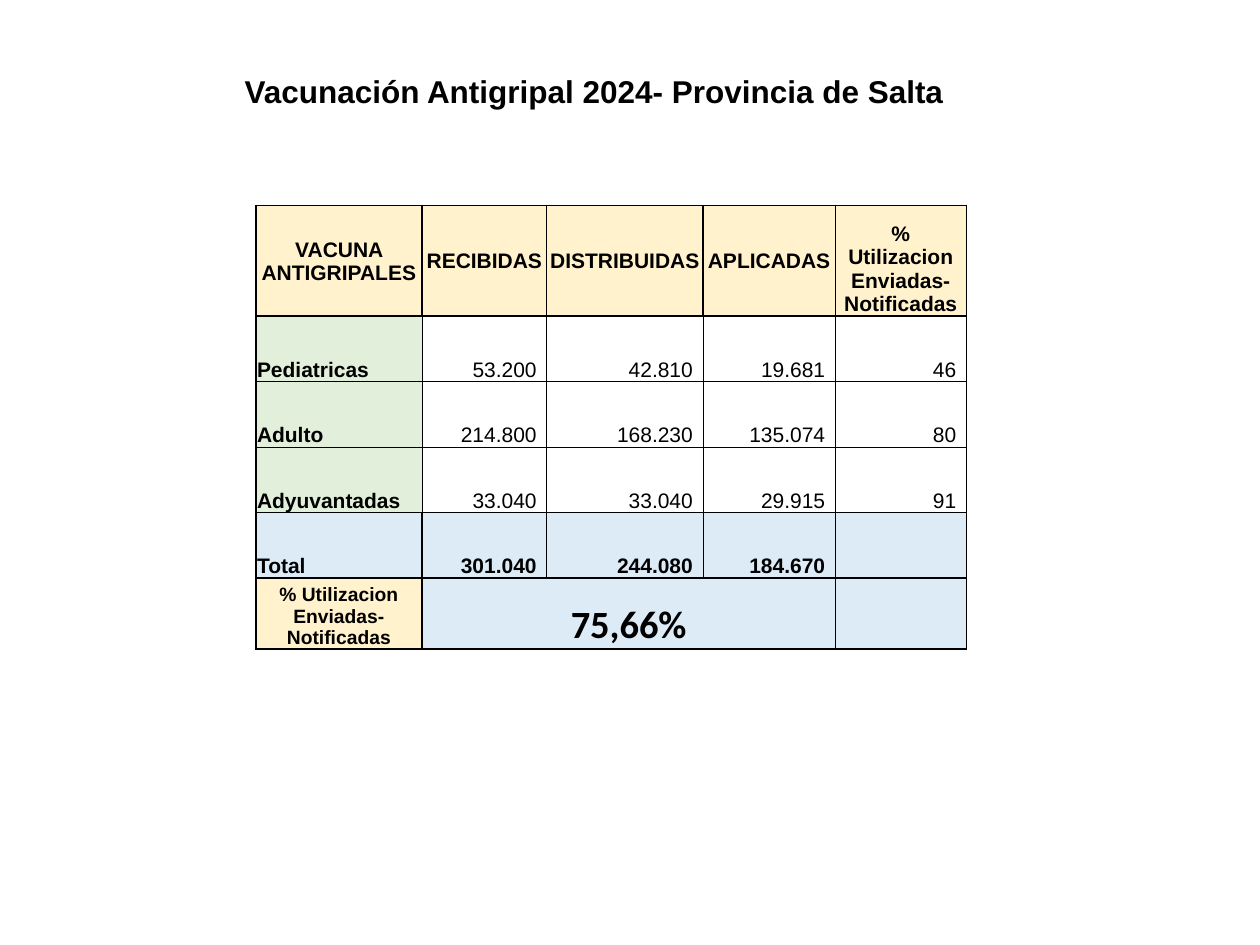
"""Build the slide on 2024 flu vaccination in the province of Salta."""
from lxml import etree
from pptx import Presentation
from pptx.dml.color import RGBColor
from pptx.enum.text import MSO_ANCHOR, MSO_AUTO_SIZE, PP_ALIGN
from pptx.oxml.ns import qn
from pptx.util import Inches, Pt

LEFT, CENTER, RIGHT = PP_ALIGN.LEFT, PP_ALIGN.CENTER, PP_ALIGN.RIGHT
MIDDLE, BOTTOM = MSO_ANCHOR.MIDDLE, MSO_ANCHOR.BOTTOM
GROW = MSO_AUTO_SIZE.SHAPE_TO_FIT_TEXT

BLACK = RGBColor(0x00, 0x00, 0x00)
CREAM = RGBColor(0xFF, 0xF2, 0xCC)
GREEN = RGBColor(0xE2, 0xEF, 0xDA)
BLUE = RGBColor(0xDD, 0xEB, 0xF7)

TITLE = "Vacunación Antigripal 2024- Provincia de Salta"
USE = "% Utilizacion Enviadas- Notificadas"
ROWS = [
    ["VACUNA ANTIGRIPALES", "RECIBIDAS", "DISTRIBUIDAS", "APLICADAS", USE],
    ["Pediatricas", "53.200", "42.810", "19.681", "46"],
    ["Adulto", "214.800", "168.230", "135.074", "80"],
    ["Adyuvantadas", "33.040", "33.040", "29.915", "91"],
    ["Total", "301.040", "244.080", "184.670", ""],
    [USE, "75,66%", "", "", ""],
]
HEADER, TOTAL, RATE = 0, 4, 5
COLUMN_WIDTHS = [1.32, 0.99, 1.24, 1.05, 1.04]
ROW_HEIGHTS = [0.88, 0.52, 0.52, 0.52, 0.52, 0.55]
HORIZONTAL_RULES = [1, 1, 0.5, 0.5, 1, 1, 1]
DATA_RULES = [1, 0.5, 0.5, 0.5, 1, 1]
VERTICAL_RULES = [
    [1, 1, 0.5, 1, 0.5, 1],
    DATA_RULES, DATA_RULES, DATA_RULES,
    [1, 1, 0.5, 0.5, 1, 1],
    [1] * 6,
]


def set_all(target, values):
    for key, value in values.items():
        setattr(target, key, value)


def write(frame, text, align, size, bold=True, name="Arial"):
    paragraph = frame.paragraphs[0]
    paragraph.alignment = align
    run = paragraph.add_run()
    run.text = text
    set_all(run.font, {"size": Pt(size), "bold": bold, "name": name})
    run.font.color.rgb = BLACK


def cell_style(row, column):
    if row == HEADER:
        return CREAM, CENTER, 12, True, "Arial"
    if row == RATE:
        if column == 0:
            return CREAM, CENTER, 11, True, "Arial"
        return BLUE, CENTER, 22, True, "Calibri"
    fill = BLUE if row == TOTAL else GREEN if column == 0 else None
    align = RIGHT if column else LEFT
    return fill, align, 12, row == TOTAL or column == 0, "Arial"


def add_borders(cell, row, column):
    vertical = VERTICAL_RULES[row]
    widths = {
        "a:lnL": vertical[column], "a:lnR": vertical[column + 1],
        "a:lnT": HORIZONTAL_RULES[row], "a:lnB": HORIZONTAL_RULES[row + 1],
    }
    properties = cell._tc.get_or_add_tcPr()
    for tag, width in widths.items():
        line = etree.SubElement(properties, qn(tag), w=str(Pt(width)))
        solid = etree.SubElement(line, qn("a:solidFill"))
        etree.SubElement(solid, qn("a:srgbClr"), val=str(BLACK))


def fill_cell(cell, row, column, text):
    fill, align, size, bold, name = cell_style(row, column)
    inset = 0.08 if align == RIGHT else 0.01
    set_all(cell, {
        "margin_left": Inches(0.01), "margin_right": Inches(inset),
        "margin_top": Inches(0.01), "margin_bottom": 0,
        "vertical_anchor": MIDDLE if row == HEADER and column < 4 else BOTTOM,
    })
    add_borders(cell, row, column)
    if fill is None:
        cell.fill.background()
    else:
        cell.fill.solid()
        cell.fill.fore_color.rgb = fill
    if text:
        write(cell.text_frame, text, align, size, bold, name)


def main():
    deck = Presentation()
    set_all(deck, {"slide_width": Inches(10), "slide_height": Inches(7.5)})
    slide = deck.slides.add_slide(deck.slide_layouts[5])

    title = slide.shapes.title
    set_all(title, {"left": Inches(1.68), "top": Inches(0.52),
                    "width": Inches(6.07), "height": Inches(0.4)})
    set_all(title.text_frame, {"word_wrap": True, "auto_size": GROW})
    write(title.text_frame, TITLE, CENTER, 18)

    table = slide.shapes.add_table(
        len(ROWS), len(COLUMN_WIDTHS), Inches(2.03), Inches(1.63),
        Inches(sum(COLUMN_WIDTHS)), Inches(sum(ROW_HEIGHTS))).table
    set_all(table, {"first_row": False, "horz_banding": False})
    for column, width in zip(table.columns, COLUMN_WIDTHS):
        column.width = Inches(width)
    for row, height in zip(table.rows, ROW_HEIGHTS):
        row.height = Inches(height)
    for r, values in enumerate(ROWS):
        for c, text in enumerate(values):
            fill_cell(table.cell(r, c), r, c, text)
    table.cell(RATE, 1).merge(table.cell(RATE, 3))

    deck.save("out.pptx")


if __name__ == "__main__":
    main()
